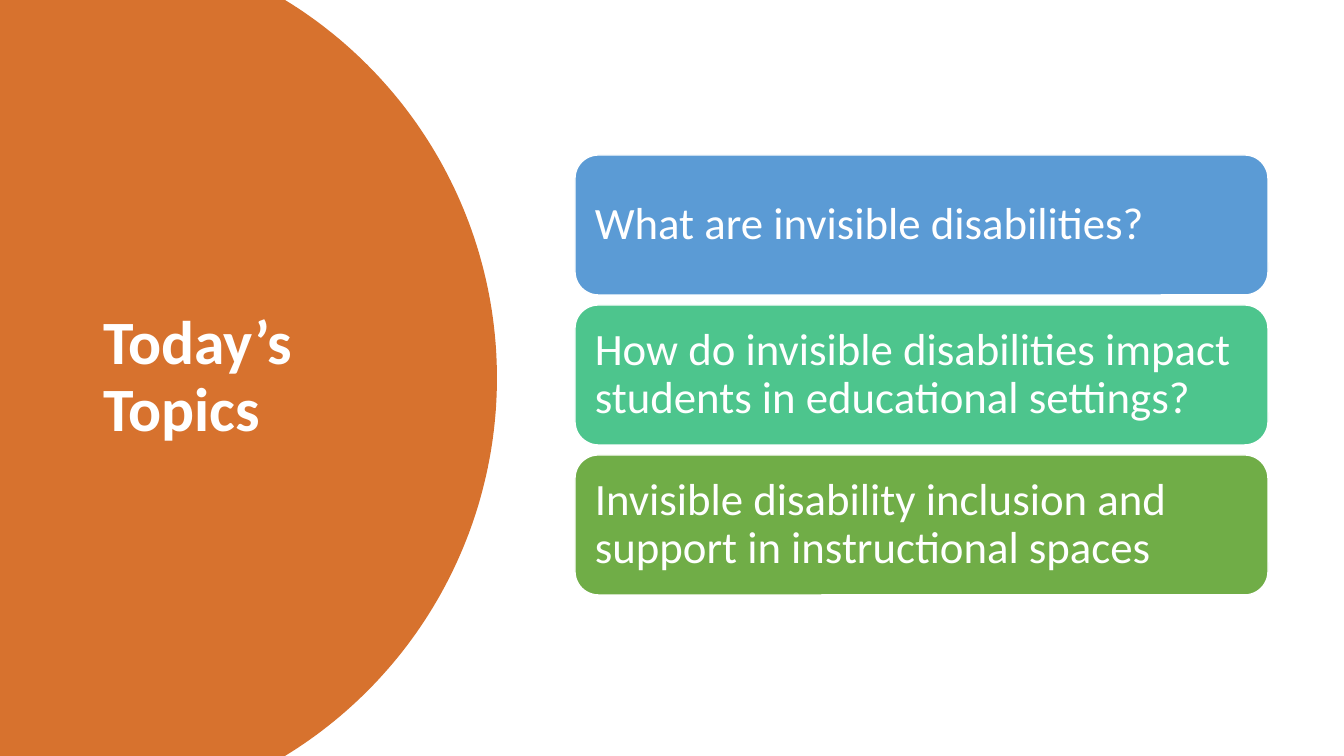
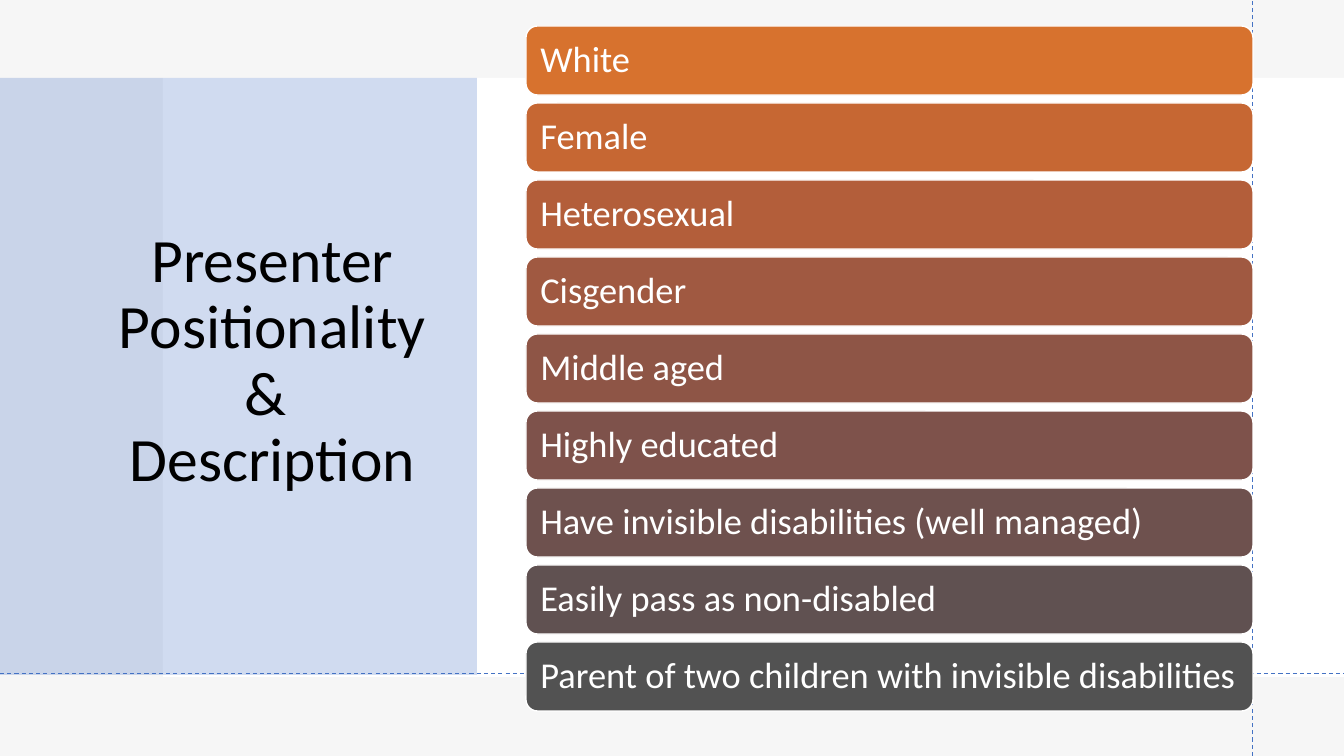
import math

import pptx
import pptx.dml.color
import pptx.enum.dml
import pptx.enum.shapes
import pptx.enum.text
import pptx.oxml.ns
import pptx.util
from lxml import etree

RGBColor = pptx.dml.color.RGBColor
SHAPES = pptx.enum.shapes.MSO_SHAPE
ALIGN = pptx.enum.text.PP_ALIGN

# Page and scale
PAGE_W, PAGE_H = 1344, 756
EMU_PER_PX = 12192000 / PAGE_W

# Shared style
FONT = "Calibri"
TITLE_SIZE = 44
LINE_SPACING = 0.9
WHITE = RGBColor(0xFF, 0xFF, 0xFF)
BLACK = RGBColor(0x00, 0x00, 0x00)
ORANGE = RGBColor(0xD7, 0x72, 0x2E)
BLUE = RGBColor(0x44, 0x72, 0xC4)
GRAY = RGBColor(0xE7, 0xE6, 0xE6)

TOPICS = [
    ("What are invisible disabilities?", RGBColor(0x5B, 0x9B, 0xD5)),
    ("How do invisible disabilities impact students in educational settings?",
     RGBColor(0x4D, 0xC5, 0x8D)),
    ("Invisible disability inclusion and support in instructional spaces",
     RGBColor(0x70, 0xAD, 0x47)),
]
POSITIONS = [
    ("White", ORANGE),
    ("Female", RGBColor(0xC6, 0x67, 0x33)),
    ("Heterosexual", RGBColor(0xB3, 0x5E, 0x3A)),
    ("Cisgender", RGBColor(0xA0, 0x59, 0x41)),
    ("Middle aged", RGBColor(0x8E, 0x55, 0x46)),
    ("Highly educated", RGBColor(0x7E, 0x52, 0x4B)),
    ("Have invisible disabilities (well managed)", RGBColor(0x6E, 0x51, 0x4E)),
    ("Easily pass as non-disabled", RGBColor(0x60, 0x51, 0x51)),
    ("Parent of two children with invisible disabilities",
     RGBColor(0x52, 0x52, 0x52)),
]


def px(length):
    return pptx.util.Emu(round(length * EMU_PER_PX))


def add_effect_free(parent, tag, **attributes):
    child = etree.SubElement(parent, pptx.oxml.ns.qn(tag))
    for key, value in attributes.items():
        child.set(key, value)


def paint(shape, color, opacity=100):
    """Give a shape a flat fill without outline or shadow."""
    shape.shadow.inherit = False
    shape.line.fill.background()
    shape.fill.solid()
    shape.fill.fore_color.rgb = color
    if opacity < 100:
        fill_color = shape.element.spPr.find(
            ".//" + pptx.oxml.ns.qn("a:srgbClr"))
        add_effect_free(fill_color, "a:alpha", val=str(opacity * 1000))


def write(frame, text, size, color, bold=False, align=ALIGN.LEFT):
    """Fill a frame with one vertically centred paragraph."""
    frame.word_wrap = True
    frame.auto_size = pptx.enum.text.MSO_AUTO_SIZE.NONE
    frame.vertical_anchor = pptx.enum.text.MSO_ANCHOR.MIDDLE
    paragraph = frame.paragraphs[0]
    paragraph.text = text
    paragraph.alignment = align
    paragraph.line_spacing = LINE_SPACING
    for run in paragraph.runs:
        run.font.name = FONT
        run.font.size = pptx.util.Pt(size)
        run.font.bold = bold
        run.font.color.rgb = color


def add_title(slide, text, box, color, bold=False, align=ALIGN.LEFT):
    title = slide.shapes.title
    title.left, title.top, title.width, title.height = map(px, box)
    write(title.text_frame, text, TITLE_SIZE, color, bold, align)
    # Bring the title in front of the backdrop
    title.element.getparent().append(title.element)


def add_panel(slide, box, color, opacity=100):
    panel = slide.shapes.add_shape(SHAPES.RECTANGLE, *map(px, box))
    paint(panel, color, opacity)


def add_guide(slide, x1, y1, x2, y2):
    guide = slide.shapes.add_connector(
        pptx.enum.shapes.MSO_CONNECTOR.STRAIGHT, px(x1), px(y1), px(x2), px(y2))
    guide.line.color.rgb = BLUE
    guide.line.width = pptx.util.Pt(0.75)
    guide.line.dash_style = pptx.enum.dml.MSO_LINE.DASH
    add_effect_free(guide.element.spPr, "a:effectLst")


def add_cards(slide, entries, box, pitch, size, inset):
    """Stack one rounded card per entry, starting at box."""
    left, top, width, height = box
    for row, (text, color) in enumerate(entries):
        card = slide.shapes.add_shape(
            SHAPES.ROUNDED_RECTANGLE,
            px(left), px(top + row * pitch), px(width), px(height))
        paint(card, color)
        card.line.color.rgb = WHITE
        card.line.width = pptx.util.Pt(1)
        frame = card.text_frame
        frame.margin_left = frame.margin_right = px(inset)
        frame.margin_top = frame.margin_bottom = px(inset)
        write(frame, text, size, WHITE)


def add_disc(slide, center_x, radius, steps=120):
    """Draw a disc cut off by the left, top and bottom page edges."""
    half = PAGE_H / 2
    reach = math.asin(half / radius)
    angles = [reach * (2 * step / steps - 1) for step in range(steps + 1)]
    arc = [(px(center_x + radius * math.cos(angle)),
            px(half + radius * math.sin(angle))) for angle in angles]
    outline = slide.shapes.build_freeform(0, 0)
    outline.add_line_segments(arc + [(0, px(PAGE_H))], close=True)
    paint(outline.convert_to_shape(), ORANGE)


def build_topics(slide):
    add_disc(slide, center_x=54, radius=443)
    add_title(slide, "Today’s Topics", (93, 71, 326, 614), WHITE, bold=True)
    add_cards(slide, TOPICS, (575, 155, 693, 140), pitch=150, size=32, inset=13)


def build_positionality(slide):
    # Backdrop
    page = (0, 0, PAGE_W, PAGE_H)
    add_panel(slide, page, WHITE)
    add_panel(slide, page, GRAY, opacity=35)
    add_panel(slide, (163, 78, PAGE_W - 163, 599), WHITE)
    add_panel(slide, (0, 78, 477, 597), BLUE, opacity=25)
    add_title(slide, "Presenter Positionality\n& \nDescription",
              (91, 75, 363, 574), BLACK, align=ALIGN.CENTER)
    # Dashed guides behind the cards
    add_guide(slide, 1253, PAGE_H, 1253, 0)
    add_guide(slide, 0, 674, PAGE_W, 674)
    add_cards(slide, POSITIONS, (526, 26, 727, 69), pitch=77, size=26, inset=11)


def main():
    deck = pptx.Presentation()
    deck.slide_width, deck.slide_height = px(PAGE_W), px(PAGE_H)
    title_only = deck.slide_layouts[5]
    for build in (build_topics, build_positionality):
        build(deck.slides.add_slide(title_only))
    deck.save("out.pptx")


if __name__ == "__main__":
    main()
